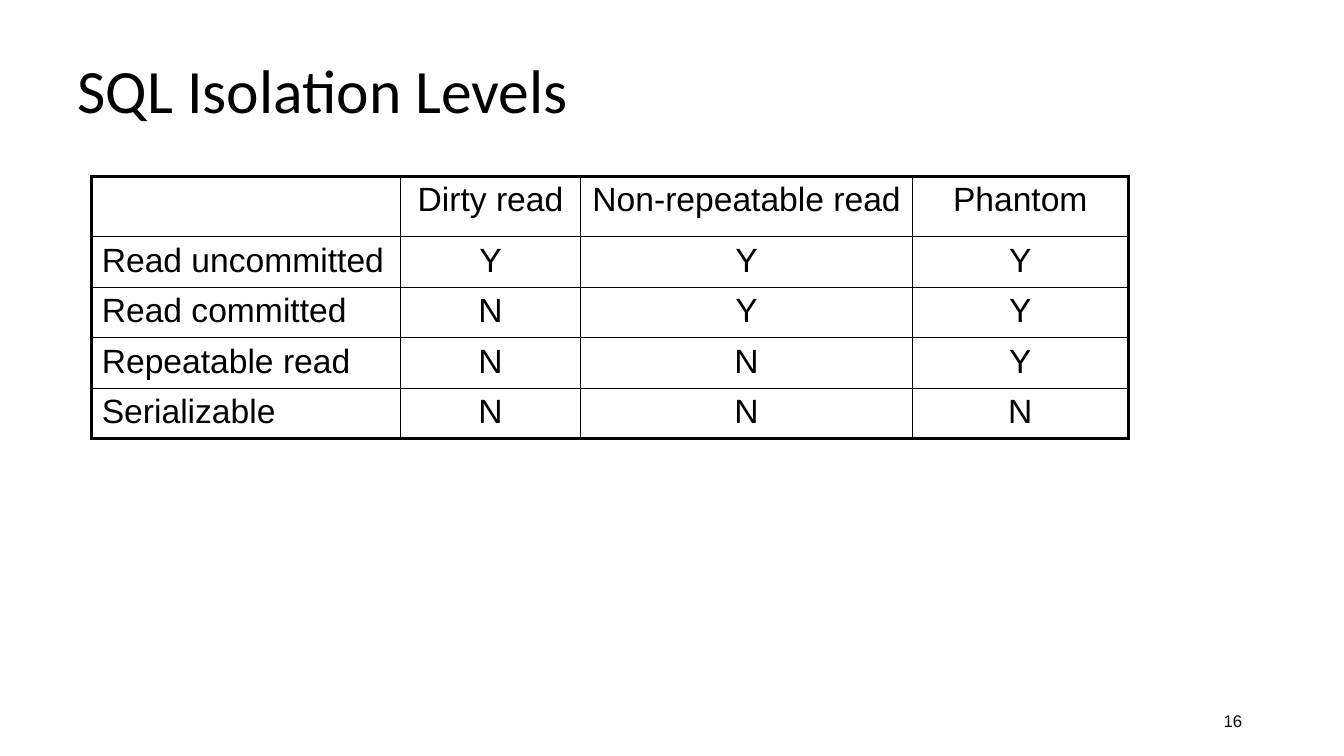
from lxml import etree
from pptx import Presentation
from pptx.dml.color import RGBColor
from pptx.enum import text
from pptx.oxml import ns
from pptx.util import Inches, Pt

COLORS = {"ink": "000000", "paper": "FFFFFF"}
OUTER_RULE, INNER_RULE = 2.25, 1

COLUMN_WIDTHS = [3.06, 1.79, 3.29, 2.14]
ROW_HEIGHTS = [0.6, 0.5, 0.5, 0.5, 0.5]
ISOLATION_LEVELS = [
    ["", "Dirty read", "Non-repeatable read", "Phantom"],
    ["Read uncommitted", "Y", "Y", "Y"],
    ["Read committed", "N", "Y", "Y"],
    ["Repeatable read", "N", "N", "Y"],
    ["Serializable", "N", "N", "N"],
]


def add_run(paragraph, wording, size, font):
    run = paragraph.add_run()
    run.text = wording
    run.font.size = Pt(size)
    run.font.name = font
    run.font.color.rgb = RGBColor.from_string(COLORS["ink"])


def place(shape, left, top, width, height):
    shape.left, shape.top = Inches(left), Inches(top)
    shape.width, shape.height = Inches(width), Inches(height)


def add_title(slide, wording):
    title = slide.shapes.title
    place(title, 0.67, 0.3, 12, 1.25)
    title.text_frame.vertical_anchor = text.MSO_ANCHOR.MIDDLE
    heading = title.text_frame.paragraphs[0]
    heading.alignment = text.PP_ALIGN.LEFT
    heading.line_spacing = 0.9
    add_run(heading, wording, 44, "Calibri")


def add_page_number(slide, number):
    box = slide.shapes.add_textbox(Inches(9.42), Inches(6.95), Inches(3), Inches(0.4))
    frame = box.text_frame
    frame.word_wrap = True
    frame.vertical_anchor = text.MSO_ANCHOR.MIDDLE
    frame.paragraphs[0].alignment = text.PP_ALIGN.RIGHT
    add_run(frame.paragraphs[0], number, 12, "Arial")


def set_borders(cell, widths):
    """Draw the cell's rules; widths maps L, R, T, B to points."""
    properties = cell._tc.get_or_add_tcPr()
    for side, width in widths.items():
        rule = etree.SubElement(properties, ns.qn(f"a:ln{side}"), w=str(Pt(width)))
        fill = etree.SubElement(rule, ns.qn("a:solidFill"))
        etree.SubElement(fill, ns.qn("a:srgbClr"), val=COLORS["ink"])


def set_space_before(paragraph, percent):
    spacing = etree.SubElement(paragraph._p.get_or_add_pPr(), ns.qn("a:spcBef"))
    etree.SubElement(spacing, ns.qn("a:spcPct"), val=str(percent * 1000))


def fill_cell(cell, wording, alignment):
    paragraph = cell.text_frame.paragraphs[0]
    paragraph.alignment = alignment
    set_space_before(paragraph, 20)
    if wording:
        add_run(paragraph, wording, 24, "Arial")


def add_levels_table(slide):
    row_count, column_count = len(ROW_HEIGHTS), len(COLUMN_WIDTHS)
    levels = slide.shapes.add_table(
        row_count, column_count, Inches(0.91), Inches(1.75),
        Inches(sum(COLUMN_WIDTHS)), Inches(sum(ROW_HEIGHTS))).table
    levels.first_row = levels.horz_banding = False
    for column, width in zip(levels.columns, COLUMN_WIDTHS):
        column.width = Inches(width)
    for row, height in zip(levels.rows, ROW_HEIGHTS):
        row.height = Inches(height)

    # Heavy rules around the table, thin rules inside
    for r, wordings in enumerate(ISOLATION_LEVELS):
        for c, wording in enumerate(wordings):
            cell = levels.cell(r, c)
            on_edge = {"L": c == 0, "R": c == column_count - 1,
                       "T": r == 0, "B": r == row_count - 1}
            set_borders(cell, {side: OUTER_RULE if edge else INNER_RULE
                               for side, edge in on_edge.items()})
            cell.fill.background()
            fill_cell(cell, wording,
                      text.PP_ALIGN.CENTER if c else text.PP_ALIGN.LEFT)


def main():
    deck = Presentation()
    deck.slide_width, deck.slide_height = Inches(13.33), Inches(7.5)
    slide = deck.slides.add_slide(deck.slide_layouts[5])
    slide.background.fill.solid()
    slide.background.fill.fore_color.rgb = RGBColor.from_string(COLORS["paper"])

    add_page_number(slide, "16")
    add_title(slide, "SQL Isolation Levels")
    add_levels_table(slide)
    deck.save("out.pptx")


if __name__ == "__main__":
    main()
